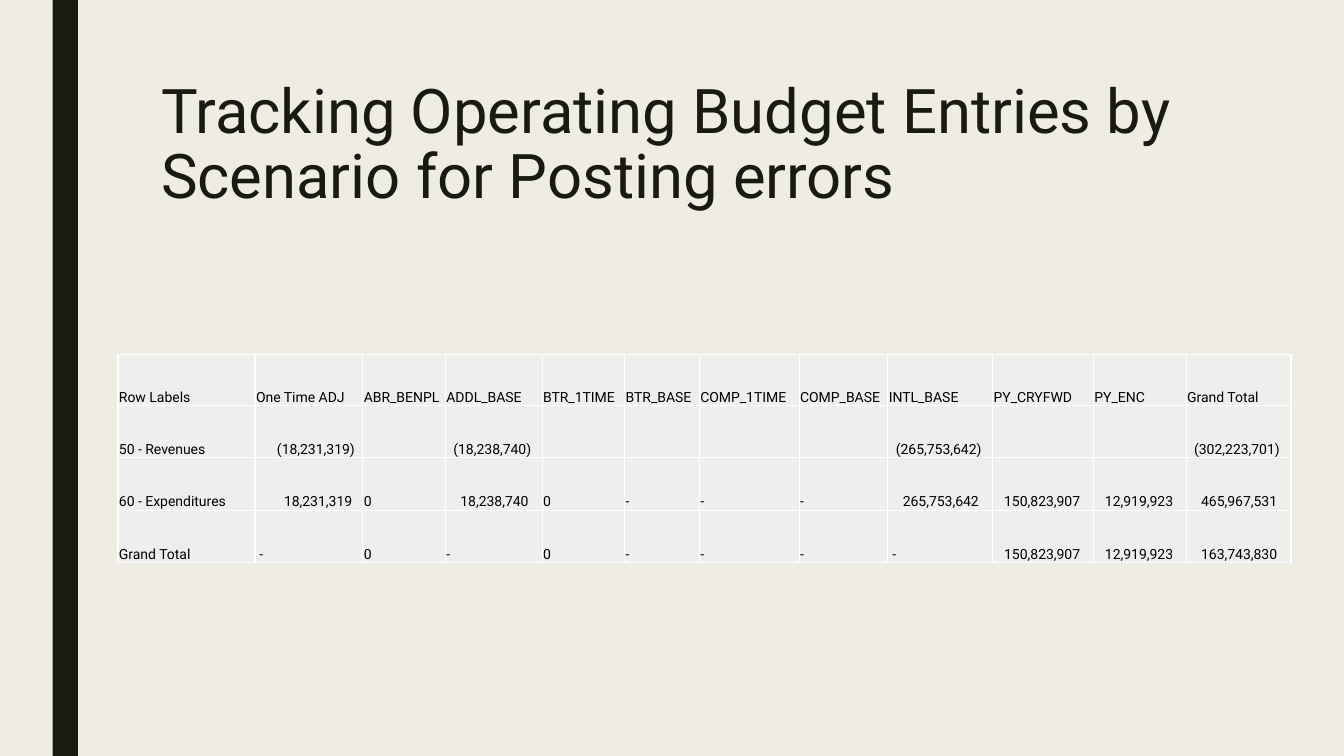
from lxml import etree
from pptx import Presentation
from pptx.dml.color import RGBColor
from pptx.enum.shapes import MSO_SHAPE
from pptx.enum.text import MSO_ANCHOR
from pptx.oxml.ns import qn
from pptx.util import Pt

RECTANGLE = MSO_SHAPE.RECTANGLE
TOP, BOTTOM = MSO_ANCHOR.TOP, MSO_ANCHOR.BOTTOM

CREAM = RGBColor(0xEF, 0xED, 0xE3)
DARK = RGBColor(0x19, 0x1B, 0x0E)
BLACK = RGBColor(0x00, 0x00, 0x00)
WHITE = RGBColor(0xFF, 0xFF, 0xFF)
CELL_GREY = RGBColor(0xEE, 0xEE, 0xED)
FONT = "Roboto"

TITLE = "Tracking Operating Budget Entries by Scenario for Posting errors"

# heading, width, indent of amounts, indent of dashes
COLUMNS = [
    ("Row Labels", 97.9, 0, 0),
    ("One Time ADJ", 77, 20, 2.5),
    ("ABR_BENPL", 59, 0, 0),
    ("ADDL_BASE", 69.1, 10, 0),
    ("BTR_1TIME", 59, 0, 0),
    ("BTR_BASE", 53.3, 0, 0),
    ("COMP_1TIME", 71.3, 0, 0),
    ("COMP_BASE", 63.4, 0, 0),
    ("INTL_BASE", 74.9, 10, 2.5),
    ("PY_CRYFWD", 72, 7.5, 0),
    ("PY_ENC", 66.2, 7.5, 0),
    ("Grand Total", 74.9, 10, 0),
]
ROWS = [
    ["50 - Revenues", "(18,231,319)", "", "(18,238,740)", "", "", "", "",
     "(265,753,642)", "", "", "(302,223,701)"],
    ["60 - Expenditures", "18,231,319", "0", "18,238,740", "0", "-", "-", "-",
     "265,753,642", "150,823,907", "12,919,923", "465,967,531"],
    ["Grand Total", "-", "0", "-", "0", "-", "-", "-",
     "-", "150,823,907", "12,919,923", "163,743,830"],
]
HEADER_HEIGHT, ROW_HEIGHT = 36.4, 37.4
NEGATIVE_SHIFT = 5
CELL_MARGIN = 0.7


def style_font(font, size, color):
    font.name = FONT
    font.size = Pt(size)
    font.color.rgb = color


def amount_indent(text, amount, dash):
    if text == "-":
        return dash
    return amount - NEGATIVE_SHIFT if text.startswith("(") else amount


def add_borders(cell):
    properties = cell._tc.get_or_add_tcPr()
    for side in ("a:lnL", "a:lnR", "a:lnT", "a:lnB"):
        line = etree.SubElement(properties, qn(side), w=str(Pt(1)))
        fill = etree.SubElement(line, qn("a:solidFill"))
        etree.SubElement(fill, qn("a:srgbClr"), val=str(WHITE))


def fill_cell(cell, text, indent):
    cell.margin_left = Pt(CELL_MARGIN + indent)
    cell.margin_right = cell.margin_top = Pt(CELL_MARGIN)
    cell.margin_bottom = Pt(0)
    cell.vertical_anchor = BOTTOM
    add_borders(cell)
    cell.fill.solid()
    cell.fill.fore_color.rgb = CELL_GREY
    cell.text = text
    style_font(cell.text_frame.paragraphs[0].font, 10, BLACK)


def add_bar(page):
    bar = page.shapes.add_shape(RECTANGLE, Pt(37.6), Pt(0), Pt(18), Pt(540))
    bar.shadow.inherit = False
    bar.fill.solid()
    bar.fill.fore_color.rgb = DARK
    bar.line.fill.background()


def add_title(page):
    box = page.shapes.add_textbox(Pt(108), Pt(54), Pt(756), Pt(117))
    frame = box.text_frame
    frame.word_wrap = True
    frame.vertical_anchor = TOP
    para = frame.paragraphs[0]
    para.text = TITLE
    para.line_spacing = 0.89
    style_font(para.font, 44, DARK)


def add_budget_table(page):
    width = sum(column[1] for column in COLUMNS)
    height = HEADER_HEIGHT + ROW_HEIGHT * len(ROWS)
    table = page.shapes.add_table(
        len(ROWS) + 1, len(COLUMNS), Pt(84.3), Pt(253.2), Pt(width), Pt(height)
    ).table
    for index, row in enumerate(table.rows):
        row.height = Pt(ROW_HEIGHT if index else HEADER_HEIGHT)
    for col, (heading, col_width, amount, dash) in enumerate(COLUMNS):
        table.columns[col].width = Pt(col_width)
        fill_cell(table.cell(0, col), heading, 0)
        for row, values in enumerate(ROWS, 1):
            text = values[col]
            fill_cell(table.cell(row, col), text, amount_indent(text, amount, dash))
    table.first_row = False
    table.horz_banding = False


def main():
    deck = Presentation()
    deck.slide_width, deck.slide_height = Pt(960), Pt(540)
    page = deck.slides.add_slide(deck.slide_layouts[6])
    page.background.fill.solid()
    page.background.fill.fore_color.rgb = CREAM
    add_bar(page)
    add_title(page)
    add_budget_table(page)
    deck.save("out.pptx")


if __name__ == "__main__":
    main()
